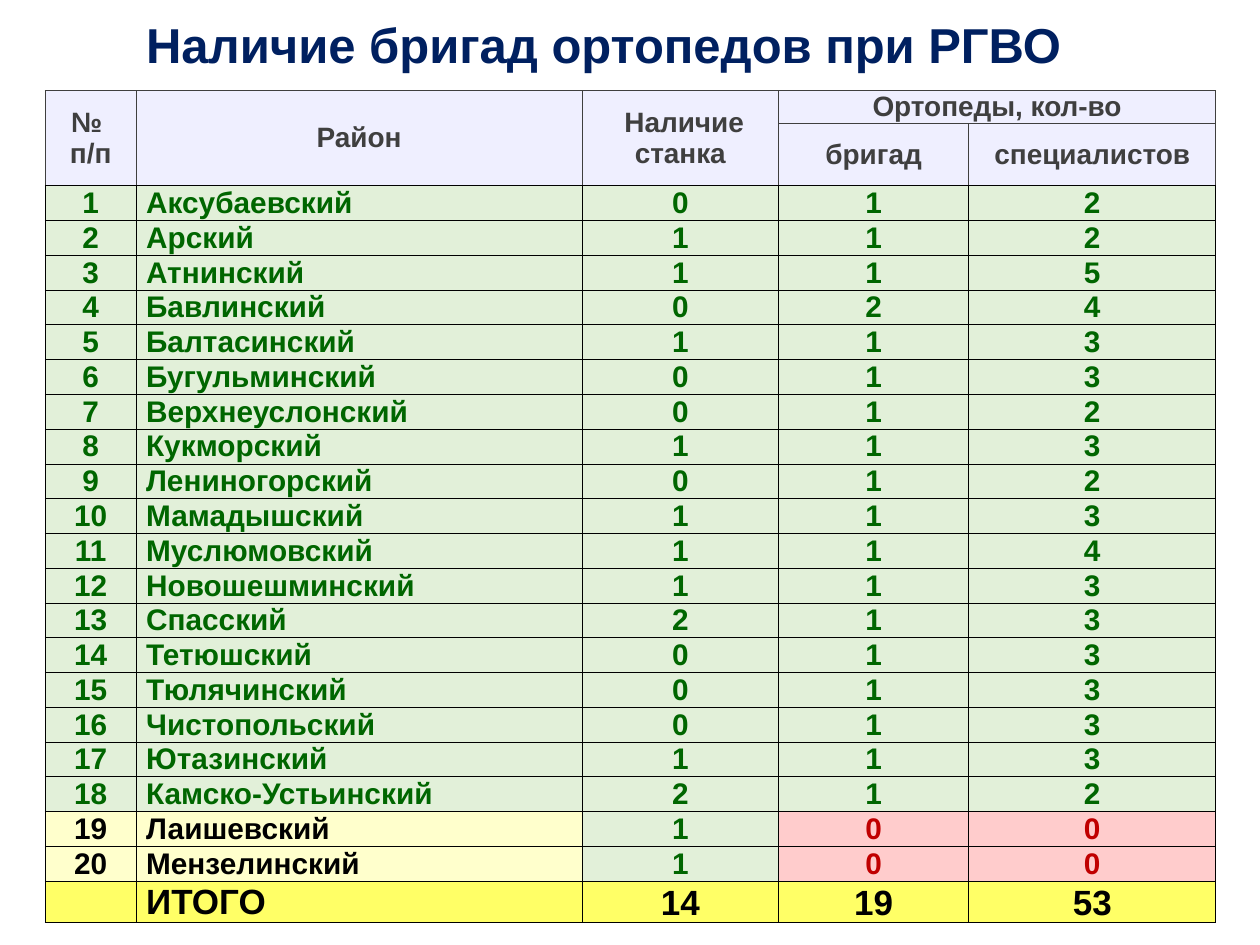
"""Build a one-slide table of orthopaedic teams by district."""
from lxml.etree import SubElement
from pptx import Presentation
from pptx.dml.color import RGBColor
from pptx.enum.text import MSO_ANCHOR as Anchor, MSO_AUTO_SIZE as AutoSize, PP_ALIGN as Align
from pptx.oxml.ns import qn
from pptx.util import Inches, Pt

HEADER_FILL, GREEN_FILL, CREAM_FILL = "EFEFFF", "E2F0D9", "FFFFCC"
PINK_FILL, TOTAL_FILL = "FFCCCC", "FFFF66"
NAVY, GREY, GREEN, RED, BLACK = "002060", "3F3F3F", "006600", "C00000", "000000"

COLUMN_WIDTHS = [0.72, 3.54, 1.56, 1.51, 1.96]
TABLE_HEIGHT, HEADER_HEIGHTS, TOTAL_HEIGHT = 6.6, [0.26, 0.49], 0.33

HEADERS = [
    ["№ \nп/п", "Район", " Наличие станка", "Ортопеды, кол-во", ""],
    ["", "", "", "бригад", "специалистов"],
]
DISTRICTS = [
    ("Аксубаевский", 0, 1, 2),
    ("Арский", 1, 1, 2),
    ("Атнинский", 1, 1, 5),
    ("Бавлинский", 0, 2, 4),
    ("Балтасинский", 1, 1, 3),
    ("Бугульминский", 0, 1, 3),
    ("Верхнеуслонский", 0, 1, 2),
    ("Кукморский", 1, 1, 3),
    ("Лениногорский", 0, 1, 2),
    ("Мамадышский", 1, 1, 3),
    ("Муслюмовский", 1, 1, 4),
    ("Новошешминский", 1, 1, 3),
    ("Спасский", 2, 1, 3),
    ("Тетюшский", 0, 1, 3),
    ("Тюлячинский", 0, 1, 3),
    ("Чистопольский", 0, 1, 3),
    ("Ютазинский", 1, 1, 3),
    ("Камско-Устьинский", 2, 1, 2),
    ("Лаишевский", 1, 0, 0),
    ("Мензелинский", 1, 0, 0),
]
TOTALS = ["", "ИТОГО", 14, 19, 53]


def color(value):
    """Turn a hex string into a colour."""
    return RGBColor.from_string(value)


class SlideBuilder:
    """Hold the font and the current slide, and add its elements."""

    def __init__(self, page, font="Arial"):
        """Remember the slide and the font."""
        self.page = page
        self.font = font

    def style(self, para, size, ink, align):
        """Format one paragraph in bold."""
        para.alignment = align
        para.font.name = self.font
        para.font.size = Pt(size)
        para.font.bold = True
        para.font.color.rgb = color(ink)

    def title(self, text, left, top, width, height):
        """Place and format the title placeholder."""
        box = self.page.shapes.title
        box.left, box.top = Inches(left), Inches(top)
        box.width, box.height = Inches(width), Inches(height)
        frame = box.text_frame
        frame.text = text
        frame.auto_size = AutoSize.NONE
        frame.vertical_anchor = Anchor.MIDDLE
        frame.margin_right = Inches(0.32)
        frame.paragraphs[0].line_spacing = 0.9
        self.style(frame.paragraphs[0], 28, NAVY, Align.CENTER)

    def table(self, left, top, widths, heights):
        """Add an unstyled table with the given column widths and row heights."""
        frame = self.page.shapes.add_table(
            len(heights), len(widths), Inches(left), Inches(top),
            Inches(sum(widths)), Inches(sum(heights)))
        grid = frame.table
        grid.first_row = grid.horz_banding = False
        for column, width in zip(grid.columns, widths):
            column.width = Inches(width)
        for row, height in zip(grid.rows, heights):
            row.height = Inches(height)
        return grid

    def borders(self, cell, edge, bottom):
        """Draw thin lines around a cell."""
        properties = cell._tc.get_or_add_tcPr()
        for side, ink in (("L", edge), ("R", edge), ("T", edge), ("B", bottom)):
            line = SubElement(properties, qn(f"a:ln{side}"), w=str(Pt(0.5)))
            fill = SubElement(line, qn("a:solidFill"))
            SubElement(fill, qn("a:srgbClr"), val=ink)

    def cell(self, cell, text, size, ink, fill, named=False,
             anchor=Anchor.MIDDLE, edge=BLACK, bottom=BLACK):
        """Fill in and format one table cell."""
        self.borders(cell, edge, bottom)
        cell.fill.solid()
        cell.fill.fore_color.rgb = color(fill)
        cell.margin_left = Inches(0.08 if named else 0.01)
        cell.margin_right = Inches(0.01)
        cell.margin_top = cell.margin_bottom = 0
        cell.vertical_anchor = anchor
        cell.text = str(text)
        for para in cell.text_frame.paragraphs:
            self.style(para, size, ink, Align.LEFT if named else Align.CENTER)


def fill_table(slide, grid):
    """Write the header, district and total rows."""
    for row, labels in enumerate(HEADERS):
        for column, label in enumerate(labels):
            bottom = GREY if row == 0 and column >= 3 else BLACK
            slide.cell(grid.cell(row, column), label, 16, GREY, HEADER_FILL,
                       edge=GREY, bottom=bottom)
    for column in range(3):
        grid.cell(0, column).merge(grid.cell(1, column))
    grid.cell(0, 3).merge(grid.cell(0, 4))

    staffed = [(GREEN, GREEN_FILL)] * 5
    unstaffed = [(BLACK, CREAM_FILL)] * 2 + staffed[:1] + [(RED, PINK_FILL)] * 2
    for number, district in enumerate(DISTRICTS, 1):
        looks = staffed if district[2] else unstaffed
        for column, (value, (ink, fill)) in enumerate(zip((number, *district), looks)):
            slide.cell(grid.cell(number + 1, column), value, 17, ink, fill, column == 1)

    for column, value in enumerate(TOTALS):
        anchor = Anchor.BOTTOM if column >= 2 else Anchor.MIDDLE
        slide.cell(grid.cell(len(DISTRICTS) + 2, column), value, 20, BLACK,
                   TOTAL_FILL, column == 1, anchor)


def main():
    """Create and save the deck."""
    deck = Presentation()
    deck.slide_width, deck.slide_height = Inches(10), Inches(7.5)
    slide = SlideBuilder(deck.slides.add_slide(deck.slide_layouts[5]))
    slide.title("Наличие бригад ортопедов при РГВО", 0.59, 0.08, 8.62, 0.6)
    count = len(DISTRICTS)
    row_height = (TABLE_HEIGHT - sum(HEADER_HEIGHTS) - TOTAL_HEIGHT) / count
    heights = HEADER_HEIGHTS + [row_height] * count + [TOTAL_HEIGHT]
    fill_table(slide, slide.table(0.36, 0.72, COLUMN_WIDTHS, heights))
    deck.save("out.pptx")


if __name__ == "__main__":
    main()
